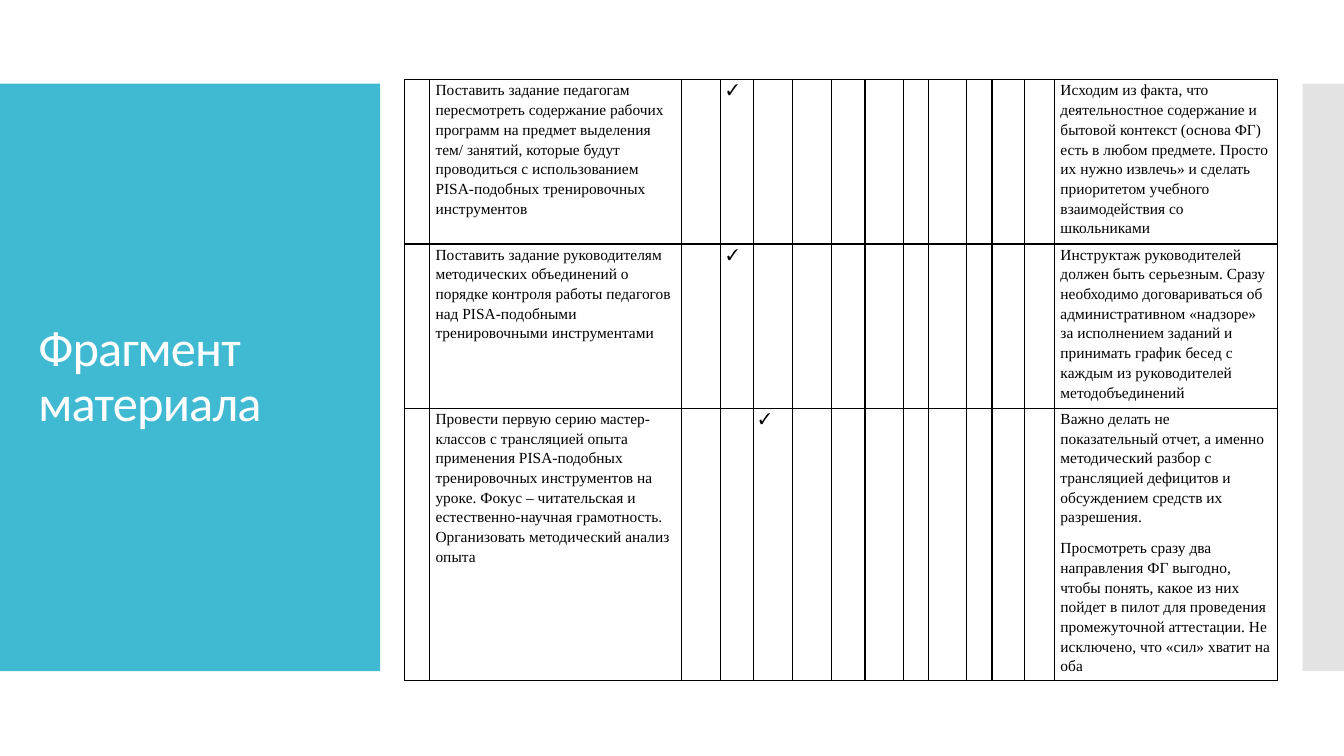
from dataclasses import dataclass

from lxml.etree import SubElement as Sub
from pptx import Presentation
from pptx.dml.color import RGBColor as Rgb
from pptx.enum.shapes import MSO_SHAPE as Shape
from pptx.enum.text import MSO_ANCHOR as Anchor
from pptx.enum.text import PP_ALIGN as Align
from pptx.oxml.ns import qn
from pptx.util import Inches, Pt

BLACK, WHITE = "000000", "FFFFFF"
WIDTHS = [0.25, 2.5, 0.39, 0.32, 0.39, 0.39, 0.33,
          0.38, 0.25, 0.38, 0.25, 0.32, 0.3, 2.21]
HEIGHTS = [1.63, 1.63, 2.7]
TASK_COL, NOTE_COL = 1, len(WIDTHS) - 1


@dataclass
class Panel:
    left: float
    width: float
    fill: str
    alpha: int = 100


@dataclass
class Step:
    task: str
    mark: int
    notes: list[str]


PANELS = [Panel(0, 3.77, "40BAD2"), Panel(12.92, 0.42, "C8C8C8", 50)]
STEPS = [
    Step("Поставить задание педагогам пересмотреть содержание рабочих программ "
         "на предмет выделения тем/ занятий, которые будут проводиться с "
         "использованием PISA-подобных тренировочных инструментов", 3,
         ["Исходим из факта, что деятельностное содержание и бытовой контекст "
          "(основа ФГ) есть в любом предмете. Просто их нужно извлечь» и сделать "
          "приоритетом учебного взаимодействия со школьниками"]),
    Step("Поставить задание руководителям методических объединений о порядке "
         "контроля работы педагогов над PISA-подобными тренировочными "
         "инструментами", 3,
         ["Инструктаж руководителей должен быть серьезным. Сразу необходимо "
          "договариваться об административном «надзоре» за исполнением заданий и "
          "принимать график бесед с каждым из руководителей методобъединений"]),
    Step("Провести первую серию мастер-классов с трансляцией опыта применения "
         "PISA-подобных тренировочных инструментов на уроке. Фокус – читательская "
         "и естественно-научная грамотность. Организовать методический анализ "
         "опыта", 4,
         ["Важно делать не показательный отчет, а именно методический разбор с "
          "трансляцией дефицитов и обсуждением средств их разрешения.",
          "Просмотреть сразу два направления ФГ выгодно, чтобы понять, какое из "
          "них пойдет в пилот для проведения промежуточной аттестации. Не "
          "исключено, что «сил» хватит на оба"]),
]


def color(value: str) -> Rgb:
    return Rgb.from_string(value)


def add_run(para, text: str, font: str, size: float, tint: str):
    run = para.add_run()
    run.text = text
    run.font.name, run.font.size = font, Pt(size)
    run.font.color.rgb = color(tint)
    return run


def draw_panel(slide, panel: Panel) -> None:
    rect = slide.shapes.add_shape(Shape.RECTANGLE, Inches(panel.left), Inches(0.83),
                                  Inches(panel.width), Inches(5.83))
    rect.shadow.inherit = False
    rect.fill.solid()
    rect.fill.fore_color.rgb = color(panel.fill)
    rect.line.fill.background()
    if panel.alpha < 100:
        tint = rect._element.spPr.find(qn("a:solidFill"))[0]
        Sub(tint, qn("a:alpha"), val=str(panel.alpha * 1000))


def draw_title(slide) -> None:
    title = slide.shapes.title
    title.left, title.top = Inches(0.28), Inches(1.23)
    title.width, title.height = Inches(3.22), Inches(5.03)
    frame = title.text_frame
    frame.word_wrap, frame.vertical_anchor = True, Anchor.MIDDLE
    para = frame.paragraphs[0]
    para.alignment, para.line_spacing = Align.LEFT, 0.9
    run = add_run(para, "Фрагмент материала", "Calibri", 36, WHITE)
    run.font._element.set("spc", "-60")
    slide.shapes._spTree.append(title._element)


def style_cell(cell) -> None:
    cell.margin_left = cell.margin_right = Inches(0.06)
    cell.margin_top = cell.margin_bottom = 0
    props = cell._tc.get_or_add_tcPr()
    for side in ("lnL", "lnR", "lnT", "lnB"):
        line = Sub(props, qn(f"a:{side}"), w=str(Pt(1)))
        fill = Sub(line, qn("a:solidFill"))
        Sub(fill, qn("a:srgbClr"), val=BLACK)
    cell.fill.background()


def fill_cell(cell, texts: list[str]) -> None:
    frame = cell.text_frame
    for i, text in enumerate(texts):
        para = frame.add_paragraph() if i else frame.paragraphs[0]
        para.line_spacing, para.space_after = 1.15, Pt(8)
        add_run(para, text, "Times New Roman", 11, BLACK)


def draw_plan(slide) -> None:
    table = slide.shapes.add_table(len(STEPS), len(WIDTHS), Inches(4.01), Inches(0.79),
                                   Inches(sum(WIDTHS)), Inches(sum(HEIGHTS))).table
    table.first_row = table.horz_banding = False
    for col, width in zip(table.columns, WIDTHS):
        col.width = Inches(width)
    for row, height in zip(table.rows, HEIGHTS):
        row.height = Inches(height)
    for cell in table.iter_cells():
        style_cell(cell)
    for i, step in enumerate(STEPS):
        fill_cell(table.cell(i, TASK_COL), [step.task])
        fill_cell(table.cell(i, step.mark), ["✓"])
        fill_cell(table.cell(i, NOTE_COL), step.notes)


def main() -> None:
    """Build the slide with a school work plan."""
    deck = Presentation()
    deck.slide_width, deck.slide_height = Inches(13.33), Inches(7.5)
    slide = deck.slides.add_slide(deck.slide_layouts[5])
    for panel in PANELS:
        draw_panel(slide, panel)
    draw_title(slide)
    draw_plan(slide)
    deck.save("out.pptx")


if __name__ == "__main__":
    main()
